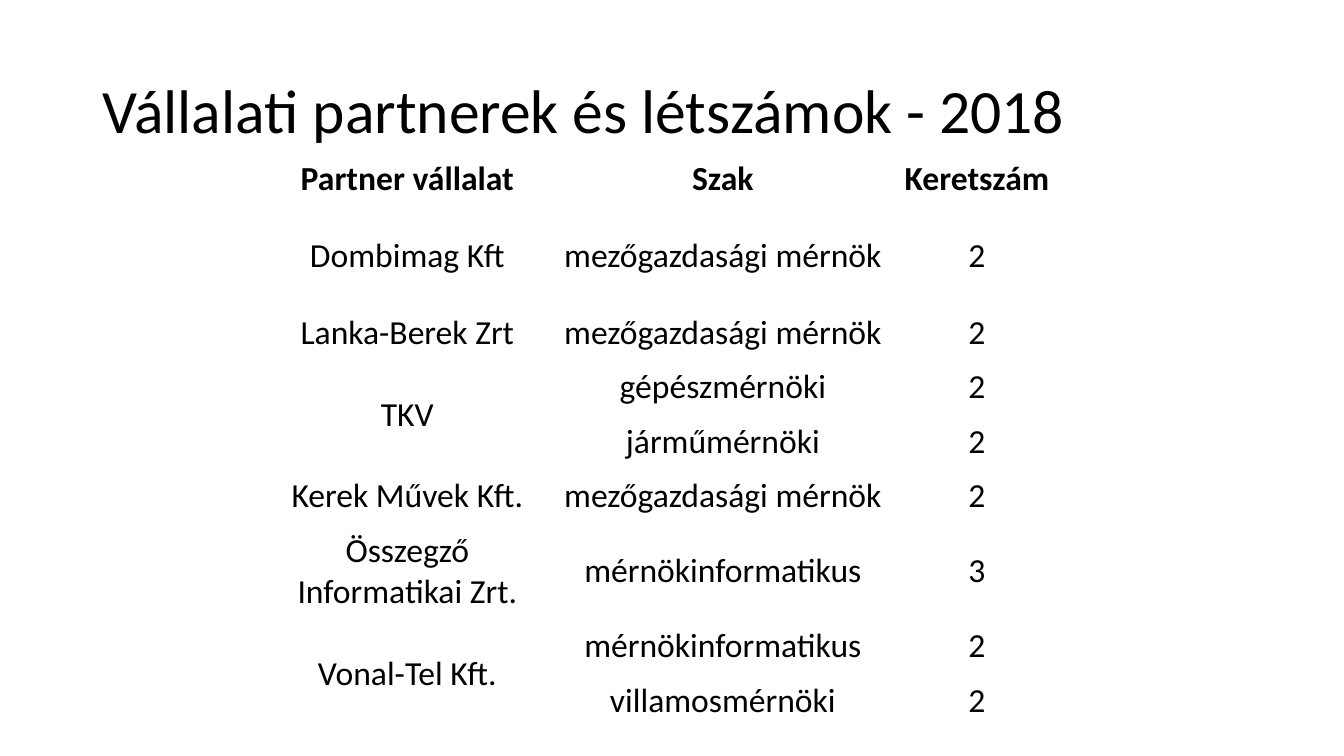
from lxml.etree import SubElement
from pptx import Presentation
from pptx.dml.color import RGBColor
from pptx.enum.text import MSO_ANCHOR as Anchor, PP_ALIGN as Align
from pptx.oxml.ns import qn
from pptx.util import Inches, Pt

FONT = "Calibri"
BLACK, WHITE = "000000", "FFFFFF"
HEADINGS = ["Partner vállalat", "Szak", "Keretszám"]
PARTNERS = [
    ("Dombimag Kft", [("mezőgazdasági mérnök", 2)]),
    ("Lanka-Berek Zrt", [("mezőgazdasági mérnök", 2)]),
    ("TKV", [("gépészmérnöki", 2), ("járműmérnöki", 2)]),
    ("Kerek Művek Kft.", [("mezőgazdasági mérnök", 2)]),
    ("Összegző Informatikai Zrt.", [("mérnökinformatikus", 3)]),
    ("Vonal-Tel Kft.", [("mérnökinformatikus", 2), ("villamosmérnöki", 2)]),
]
COLUMN_WIDTHS = [2.74, 3.52, 1.52]
ROW_HEIGHT = 0.54
TALL_ROWS = {1: 0.99, 6: 0.95}


def color(value):
    """Turn a hex string into a colour."""
    return RGBColor.from_string(value)


def style_text(paragraph, size, bold=False):
    """Format the runs of a paragraph."""
    for run in paragraph.runs:
        run.font.name = FONT
        run.font.size = Pt(size)
        run.font.bold = bold
        run.font.color.rgb = color(BLACK)


def add_borders(cell):
    """Draw a thin white line on each side of a cell."""
    properties = cell._tc.get_or_add_tcPr()
    for position, side in enumerate(("lnL", "lnR", "lnT", "lnB")):
        border = SubElement(properties, qn(f"a:{side}"), w=str(Pt(1)))
        fill = SubElement(border, qn("a:solidFill"))
        SubElement(fill, qn("a:srgbClr"), val=WHITE)
        properties.insert(position, border)


def fill_cell(cell, text, bold):
    """Write centred text into a cell."""
    cell.text_frame.text = text
    cell.vertical_anchor = Anchor.MIDDLE
    cell.margin_left = cell.margin_right = cell.margin_top = Inches(0.01)
    cell.margin_bottom = 0
    paragraph = cell.text_frame.paragraphs[0]
    paragraph.alignment = Align.CENTER
    style_text(paragraph, 24, bold)


def add_title(slide, left, top, width, height):
    """Place the slide title in its box."""
    title = slide.shapes.add_textbox(
        Inches(left), Inches(top), Inches(width), Inches(height))
    frame = title.text_frame
    frame.word_wrap = True
    frame.vertical_anchor = Anchor.MIDDLE
    frame.text = "Vállalati partnerek és létszámok - 2018"
    frame.paragraphs[0].line_spacing = 0.9
    style_text(frame.paragraphs[0], 44)


def add_partner_table(slide, left, top):
    """Place the table of partners, courses and headcounts."""
    row_count = 1 + sum(len(courses) for _, courses in PARTNERS)
    heights = [TALL_ROWS.get(row, ROW_HEIGHT) for row in range(row_count)]
    table = slide.shapes.add_table(
        row_count, len(HEADINGS), Inches(left), Inches(top),
        Inches(sum(COLUMN_WIDTHS)), Inches(sum(heights))).table
    table.first_row = table.horz_banding = False
    for column, width in zip(table.columns, COLUMN_WIDTHS):
        column.width = Inches(width)
    for row, height in zip(table.rows, heights):
        row.height = Inches(height)
    for cell in table.iter_cells():
        cell.fill.background()
        add_borders(cell)

    for column, heading in enumerate(HEADINGS):
        fill_cell(table.cell(0, column), heading, True)
    row = 1
    for partner, courses in PARTNERS:
        if len(courses) > 1:
            table.cell(row, 0).merge(table.cell(row + len(courses) - 1, 0))
        fill_cell(table.cell(row, 0), partner, False)
        for course, headcount in courses:
            fill_cell(table.cell(row, 1), course, False)
            fill_cell(table.cell(row, 2), str(headcount), False)
            row += 1


def main():
    """Build and save the slide."""
    deck = Presentation()
    deck.slide_width, deck.slide_height = Inches(13.33), Inches(7.5)
    slide = deck.slides.add_slide(deck.slide_layouts[6])
    slide.background.fill.solid()
    slide.background.fill.fore_color.rgb = color(WHITE)
    add_title(slide, 0.92, 0.4, 11.5, 1.45)
    add_partner_table(slide, 2.67, 1.5)
    deck.save("out.pptx")


if __name__ == "__main__":
    main()
